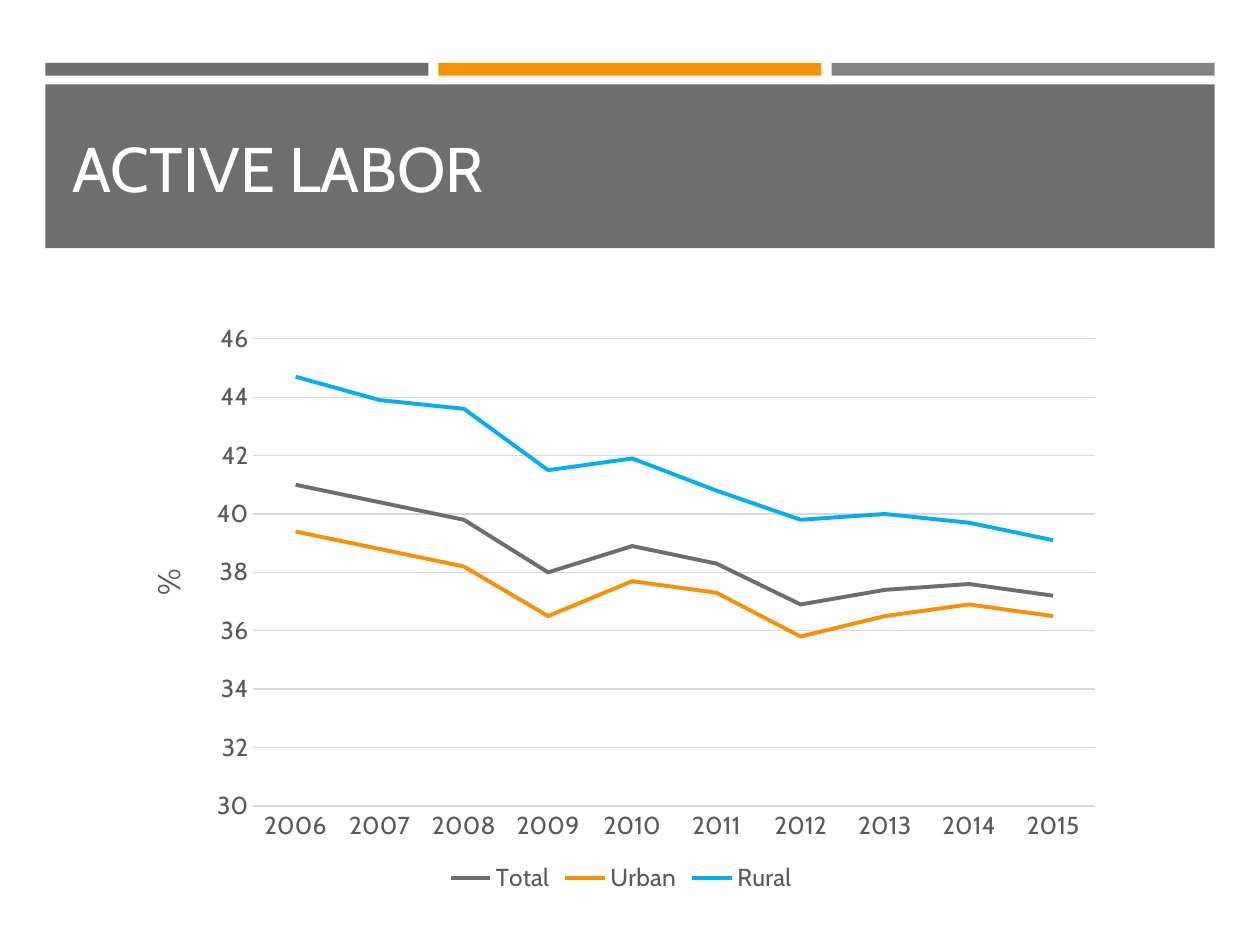
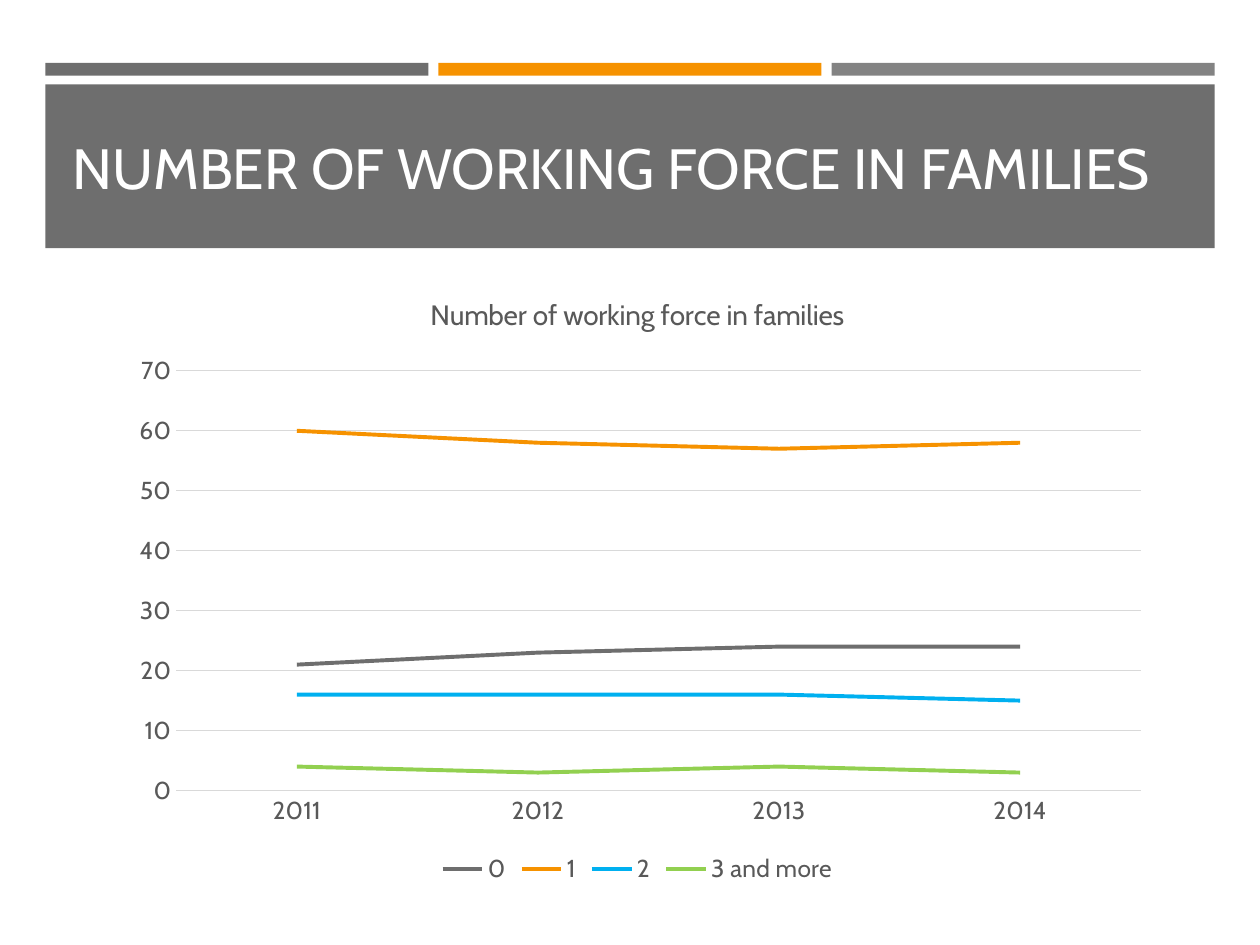
from lxml import etree
from pptx import Presentation
from pptx.chart.data import CategoryChartData
from pptx.dml.color import RGBColor
from pptx.enum.chart import XL_CHART_TYPE, XL_LEGEND_POSITION, XL_MARKER_STYLE, XL_TICK_MARK
from pptx.enum.shapes import MSO_SHAPE
from pptx.enum.text import MSO_ANCHOR
from pptx.oxml import parse_xml
from pptx.oxml.ns import nsdecls, qn
from pptx.util import Inches, Pt

FONT = "Cabin"
GREY, ORANGE, SILVER = "6E6E6E", "F69200", "838383"
BLUE, GREEN = "00B0F0", "92D050"
WHITE, LABEL, GRID = "FFFFFF", "595959", "D9D9D9"
SERIES_COLORS = [GREY, ORANGE, BLUE, GREEN]
MARGIN, BAND_WIDTH, STRIP_WIDTH, STRIP_STEP = 0.36, 9.28, 3.04, 3.12


def paint(color_format, hex_color):
    color_format.rgb = RGBColor.from_string(hex_color)


def style_font(font, size, hex_color):
    font.name, font.size, font.bold = FONT, Pt(size), False
    paint(font.color, hex_color)


charts = [
    {
        "heading": "ACTIVE LABOR", "heading_size": 36,
        "box": (1.09, 2.25, 7.68, 4.88), "scale": (30, 46, 2),
        "caption": None, "unit": "%",
        "plot": {"x": 0.12, "y": 0.09, "w": 0.87, "h": 0.76},
        "years": range(2006, 2016),
        "lines": {
            "Total": [41, 40.4, 39.8, 38, 38.9, 38.3, 36.9, 37.4, 37.6, 37.2],
            "Urban": [39.4, 38.8, 38.2, 36.5, 37.7, 37.3, 35.8, 36.5, 36.9, 36.5],
            "Rural": [44.7, 43.9, 43.6, 41.5, 41.9, 40.8, 39.8, 40, 39.7, 39.1],
        },
    },
    {
        "heading": "NUMBER OF WORKING FORCE IN FAMILIES", "heading_size": 32.4,
        "box": (0.9, 2.16, 8.32, 4.9), "scale": (0, 70, 10),
        "caption": "Number of working force in families", "unit": None,
        "plot": {"x": 0.06, "y": 0.16, "w": 0.92, "h": 0.68},
        "years": range(2011, 2015),
        "lines": {
            "0": [21, 23, 24, 24],
            "1": [60, 58, 57, 58],
            "2": [16, 16, 16, 15],
            "3 and more": [4, 3, 4, 3],
        },
    },
]

deck = Presentation()
deck.slide_width, deck.slide_height = Inches(10), Inches(7.5)

for content in charts:
    slide = deck.slides.add_slide(deck.slide_layouts[6])

    bands = [(MARGIN + i * STRIP_STEP, 0.5, STRIP_WIDTH, 0.1, color)
             for i, color in enumerate([GREY, ORANGE, SILVER])]
    bands.append((MARGIN, 0.67, BAND_WIDTH, 1.3, GREY))
    for *box, color in bands:
        band = slide.shapes.add_shape(MSO_SHAPE.RECTANGLE, *map(Inches, box))
        band.shadow.inherit = False
        band.fill.solid()
        paint(band.fill.fore_color, color)
        band.line.fill.background()

    heading = slide.shapes.add_textbox(*map(Inches, (0.48, 0.77, 9.05, 1.11))).text_frame
    heading.word_wrap = True
    heading.vertical_anchor = MSO_ANCHOR.MIDDLE
    heading.text = content["heading"]
    style_font(heading.paragraphs[0].runs[0].font, content["heading_size"], WHITE)

    data = CategoryChartData()
    data.categories = [str(year) for year in content["years"]]
    for name, values in content["lines"].items():
        data.add_series(name, values)
    chart = slide.shapes.add_chart(
        XL_CHART_TYPE.LINE, *map(Inches, content["box"]), data).chart
    style_font(chart.font, 14, LABEL)

    chart.has_title = bool(content["caption"])
    if content["caption"]:
        caption = chart.chart_title.text_frame
        caption.text = content["caption"]
        style_font(caption.paragraphs[0].runs[0].font, 16, LABEL)

    chart.has_legend = True
    chart.legend.position = XL_LEGEND_POSITION.BOTTOM
    chart.legend.include_in_layout = False
    style_font(chart.legend.font, 14, LABEL)

    years, percent = chart.category_axis, chart.value_axis
    for axis in (years, percent):
        axis.major_tick_mark = axis.minor_tick_mark = XL_TICK_MARK.NONE
        style_font(axis.tick_labels.font, 14, LABEL)
    percent.minimum_scale, percent.maximum_scale, percent.major_unit = content["scale"]
    percent.has_major_gridlines = True
    percent.format.line.fill.background()
    for rule in (years.format.line, percent.major_gridlines.format.line):
        rule.width = Pt(0.75)
        paint(rule.color, GRID)

    if content["unit"]:
        unit = percent.axis_title.text_frame
        unit.text = content["unit"]
        style_font(unit.paragraphs[0].runs[0].font, 18, LABEL)

    for line, color in zip(chart.plots[0].series, SERIES_COLORS):
        line.smooth = False
        line.marker.style = XL_MARKER_STYLE.NONE
        line.format.line.width = Pt(2.25)
        paint(line.format.line.color, color)

    plot_area = chart.plots[0]._element.getparent()
    for old_layout in plot_area.findall(qn("c:layout")):
        plot_area.remove(old_layout)
    layout = parse_xml(f"<c:layout {nsdecls('c')}><c:manualLayout/></c:layout>")
    settings = {"layoutTarget": "inner", "xMode": "edge", "yMode": "edge"} | content["plot"]
    for key, value in settings.items():
        etree.SubElement(layout[0], qn(f"c:{key}")).set("val", str(value))
    plot_area.insert(0, layout)

deck.save("out.pptx")
